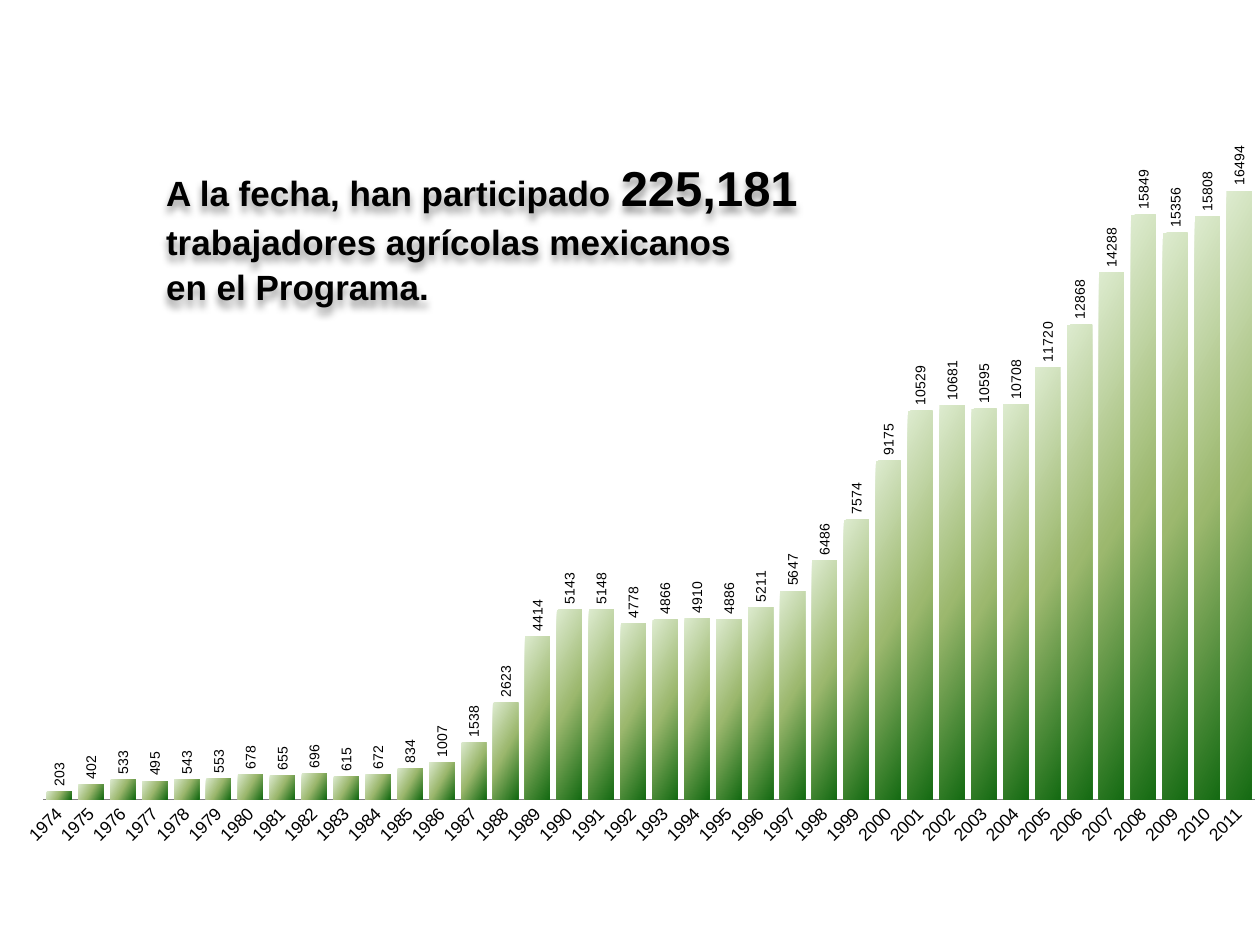
from lxml import etree
from pptx import Presentation
from pptx.chart.data import CategoryChartData
from pptx.dml.color import RGBColor
from pptx.enum.chart import XL_CHART_TYPE, XL_LABEL_POSITION, XL_TICK_MARK
from pptx.enum.text import MSO_AUTO_SIZE, PP_ALIGN
from pptx.oxml import parse_xml
from pptx.oxml.ns import nsdecls, qn
from pptx.util import Inches, Pt

COLUMN = XL_CHART_TYPE.COLUMN_CLUSTERED
OUTSIDE = XL_LABEL_POSITION.OUTSIDE_END
NO_TICK = XL_TICK_MARK.NONE
GROW = MSO_AUTO_SIZE.SHAPE_TO_FIT_TEXT
JUSTIFY = PP_ALIGN.JUSTIFY


class Theme:
    font = "Arial"
    ink = "000000"
    axis = "808080"
    stops = [(0, "DDEBCF"), (50, "9CB86E"), (100, "156B13")]
    angle = 30
    label = 8
    year = 10
    body = 20
    total = 28
    leading = 26


YEARS = [str(year) for year in range(1974, 2012)]
WORKERS = [
    203, 402, 533, 495, 543, 553, 678, 655, 696, 615,
    672, 834, 1007, 1538, 2623, 4414, 5143, 5148, 4778, 4866,
    4910, 4886, 5211, 5647, 6486, 7574, 9175, 10529, 10681, 10595,
    10708, 11720, 12868, 14288, 15849, 15356, 15808, 16494,
]
MESSAGE = [
    [("A la fecha, han participado ", Theme.body), ("225,181", Theme.total)],
    [("trabajadores agrícolas mexicanos", Theme.body)],
    [("en el Programa.", Theme.body)],
]


class Page:
    def __init__(self, slide, theme):
        self.slide = slide
        self.theme = theme

    def style(self, font, size, bold=False):
        font.name = self.theme.font
        font.size = Pt(size)
        font.bold = bold
        font.color.rgb = RGBColor.from_string(self.theme.ink)

    def turn(self, owner, angle):
        body = owner._element.find(qn("c:txPr")).find(qn("a:bodyPr"))
        body.set("rot", str(angle * 60000))
        body.set("vert", "horz")

    def shade(self, series):
        stops = "".join(
            f'<a:gs pos="{spot * 1000}"><a:srgbClr val="{color}"/></a:gs>'
            for spot, color in self.theme.stops
        )
        fill = parse_xml(
            f'<a:gradFill {nsdecls("a")} rotWithShape="1"><a:gsLst>{stops}</a:gsLst>'
            f'<a:lin ang="{self.theme.angle * 60000}" scaled="0"/></a:gradFill>'
        )
        series.format.line.fill.background()
        series._element.spPr.insert(0, fill)

    def place(self, chart, x, y, w, h):
        area = chart._chartSpace.chart.plotArea
        for old in area.findall(qn("c:layout")):
            area.remove(old)
        layout = etree.Element(qn("c:layout"))
        manual = etree.SubElement(layout, qn("c:manualLayout"))
        parts = [("layoutTarget", "inner"), ("xMode", "edge"), ("yMode", "edge"),
                 ("x", x), ("y", y), ("w", w), ("h", h)]
        for tag, value in parts:
            etree.SubElement(manual, qn(f"c:{tag}")).set("val", str(value))
        area.insert(0, layout)

    def columns(self, x, y, w, h, names, values):
        data = CategoryChartData()
        data.categories = names
        data.add_series("Series 1", values)
        frame = self.slide.shapes.add_chart(
            COLUMN, Inches(x), Inches(y), Inches(w), Inches(h), data)
        chart = frame.chart
        self.style(chart.font, self.theme.year)
        chart.has_legend = False
        chart.has_title = False
        self.place(chart, 0.013, 0.001, 0.983, 0.881)

        scale = chart.value_axis
        scale.minimum_scale = 0
        scale.maximum_scale = 18000
        scale.has_major_gridlines = False
        scale.visible = False

        axis = chart.category_axis
        axis.major_tick_mark = NO_TICK
        axis.minor_tick_mark = NO_TICK
        axis.format.line.color.rgb = RGBColor.from_string(self.theme.axis)
        self.style(axis.tick_labels.font, self.theme.year)
        self.turn(axis, -45)

        plot = chart.plots[0]
        plot.gap_width = 27
        plot.vary_by_categories = False
        self.shade(plot.series[0])
        plot.has_data_labels = True
        labels = plot.data_labels
        labels.show_value = True
        labels.position = OUTSIDE
        self.style(labels.font, self.theme.label)
        self.turn(labels, -90)

    def text(self, x, y, w, h, lines):
        box = self.slide.shapes.add_textbox(
            Inches(x), Inches(y), Inches(w), Inches(h))
        frame = box.text_frame
        frame.word_wrap = True
        frame.auto_size = GROW
        for i, line in enumerate(lines):
            para = frame.paragraphs[0] if i == 0 else frame.add_paragraph()
            para.alignment = JUSTIFY
            para.line_spacing = Pt(self.theme.leading)
            props = para._p.get_or_add_pPr()
            props.set("marL", str(Inches(0.4)))
            props.set("indent", str(Inches(-0.4)))
            for words, size in line:
                run = para.add_run()
                run.text = words
                self.style(run.font, size, True)
        box._element.spPr.append(parse_xml(
            f'<a:effectLst {nsdecls("a")}>'
            '<a:outerShdw blurRad="50800" dist="38100" dir="5400000" algn="t" rotWithShape="0">'
            '<a:srgbClr val="000000"><a:alpha val="40000"/></a:srgbClr>'
            '</a:outerShdw></a:effectLst>'))


def main():
    deck = Presentation()
    deck.slide_width = Inches(10)
    deck.slide_height = Inches(7.5)
    page = Page(deck.slides.add_slide(deck.slide_layouts[6]), Theme)
    page.columns(0.2, 1.07, 9.8, 5.98, YEARS, WORKERS)
    page.text(1.22, 1.31, 5.43, 1.19, MESSAGE)
    deck.save("out.pptx")


if __name__ == "__main__":
    main()
